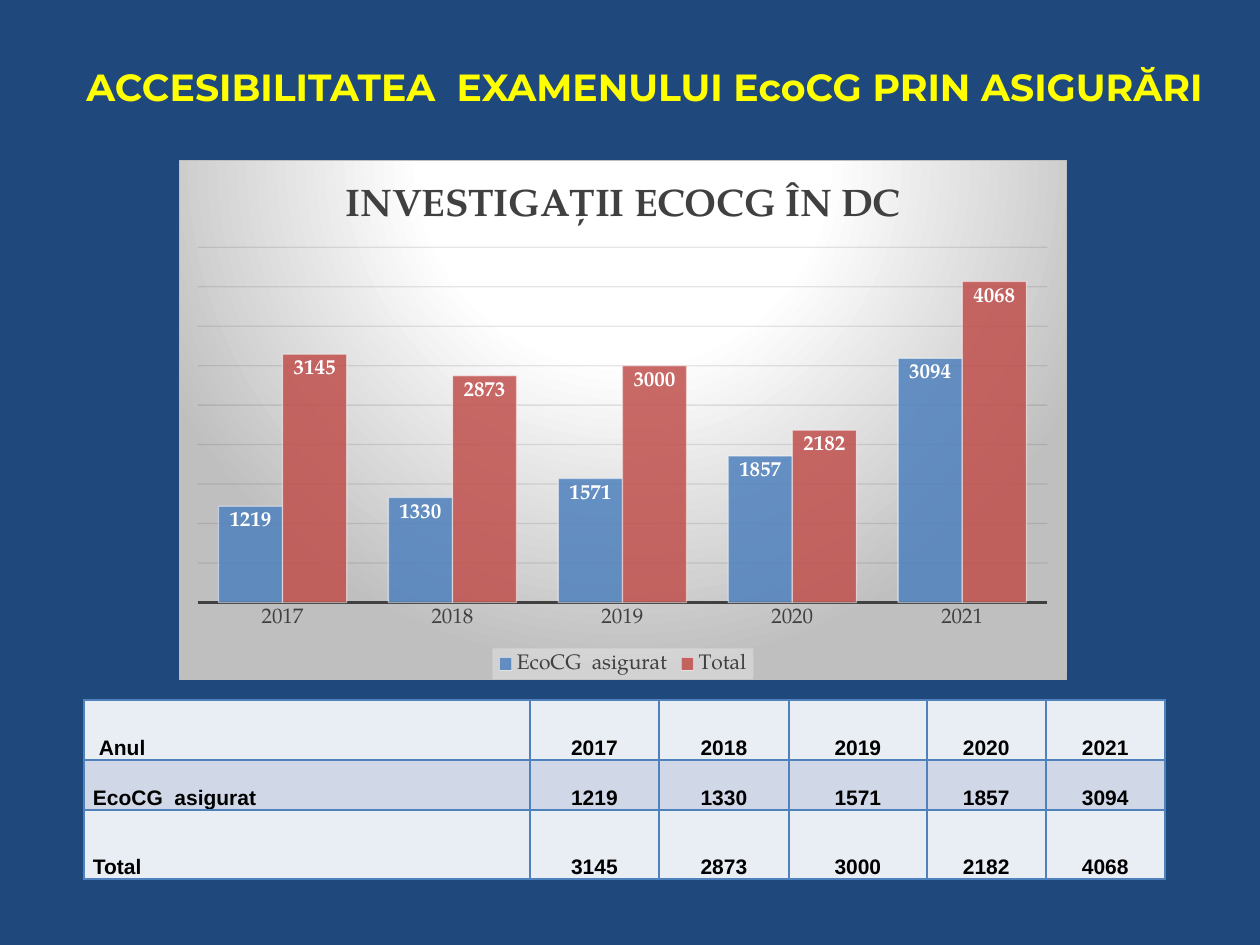
import pptx
import pptx.util
import pptx.chart.data
import pptx.dml.color
import pptx.enum.chart
import pptx.enum.text
import pptx.oxml
import pptx.oxml.ns

PX = 914400 / 126
HUES = {"back": "1F497D", "title": "FFFF00", "white": "FFFFFF", "grey": "BFBFBF",
        "dark": "404040", "grid": "0D0D0D", "blue": "4F81BD", "red": "C0504D",
        "black": "000000", "pale": "E9EDF4", "band": "D0D8E8", "key": "F2F2F2"}
SERIF = "TeX Gyre Pagella"
YEARS = ["2017", "2018", "2019", "2020", "2021"]
DATA = {"EcoCG  asigurat": [1219, 1330, 1571, 1857, 3094],
        "Total": [3145, 2873, 3000, 2182, 4068]}
NS = pptx.oxml.ns.nsdecls("a", "c")
qn = pptx.oxml.ns.qn
ANCHOR = pptx.enum.text.MSO_ANCHOR
ALIGN = pptx.enum.text.PP_ALIGN


def emu(px):
    return pptx.util.Emu(round(px * PX))


def rgb(name):
    return pptx.dml.color.RGBColor.from_string(HUES[name])


def put(item, vals):
    for key, val in vals.items():
        setattr(item, key, val)


def style(font, size, name, hue, bold=False):
    put(font, {"size": pptx.util.Pt(size), "name": name, "bold": bold})
    font.color.rgb = rgb(hue)


def stroke(line, hue, width=0.75):
    line.color.rgb = rgb(hue)
    line.width = pptx.util.Pt(width)


def fade(node, share):
    """Give each colour below the node an opacity in percent."""
    for tag in node.iter(qn("a:srgbClr")):
        tag.append(pptx.oxml.parse_xml(f'<a:alpha {NS} val="{share * 1000}"/>'))


def layout(x, y, w, h, inner=True):
    target = '<c:layoutTarget val="inner"/>' if inner else ""
    return pptx.oxml.parse_xml(
        f'<c:layout {NS}><c:manualLayout>{target}<c:xMode val="edge"/><c:yMode val="edge"/>'
        f'<c:x val="{x:.4f}"/><c:y val="{y:.4f}"/><c:w val="{w:.4f}"/><c:h val="{h:.4f}"/>'
        '</c:manualLayout></c:layout>')


def panel(chart):
    """Radial background and thin border of the chart."""
    stops = "".join(f'<a:gs pos="{pos}000"><a:srgbClr val="{HUES[hue]}"/></a:gs>'
                    for pos, hue in [(0, "white"), (39, "white"), (100, "grey")])
    props = pptx.oxml.parse_xml(
        f'<c:spPr {NS}><a:gradFill><a:gsLst>{stops}</a:gsLst><a:path path="circle">'
        '<a:fillToRect l="50000" t="-80000" r="50000" b="180000"/></a:path></a:gradFill>'
        f'<a:ln w="9525"><a:solidFill><a:srgbClr val="{HUES["grey"]}"/></a:solidFill></a:ln>'
        '</c:spPr>')
    chart._chartSpace.find(qn("c:chart")).addnext(props)


def add_title(slide, x, y, w, h):
    title = slide.shapes.title
    put(title, {"left": emu(x), "top": emu(y), "width": emu(w), "height": emu(h)})
    frame = title.text_frame
    put(frame, {"vertical_anchor": ANCHOR.MIDDLE, "word_wrap": True,
                "text": "ACCESIBILITATEA  EXAMENULUI EcoCG PRIN ASIGURĂRI"})
    para = frame.paragraphs[0]
    para.alignment = ALIGN.CENTER
    style(para.runs[0].font, 21.6, "Montserrat", "title", True)


def add_bars(slide, x, y, w, h):
    data = pptx.chart.data.CategoryChartData()
    data.categories = YEARS
    for name, vals in DATA.items():
        data.add_series(name, vals)
    kinds = pptx.enum.chart
    chart = slide.shapes.add_chart(kinds.XL_CHART_TYPE.COLUMN_CLUSTERED,
                                   emu(x), emu(y), emu(w), emu(h), data).chart
    style(chart.font, 10, SERIF, "white")
    panel(chart)

    # Heading
    chart.has_title = True
    head = chart.chart_title
    head.include_in_layout = False
    head.text_frame.text = "INVESTIGAȚII ECOCG ÎN DC"
    style(head.text_frame.paragraphs[0].runs[0].font, 22, SERIF, "dark", True)

    # Axes
    axis = chart.category_axis
    put(axis, {"major_tick_mark": kinds.XL_TICK_MARK.NONE,
               "minor_tick_mark": kinds.XL_TICK_MARK.NONE})
    style(axis.tick_labels.font, 12, SERIF, "dark")
    stroke(axis.format.line, "dark", 1.5)
    scale = chart.value_axis
    put(scale, {"visible": False, "minimum_scale": 0, "maximum_scale": 4500,
                "major_unit": 500, "has_major_gridlines": True})
    stroke(scale.major_gridlines.format.line, "grid")
    fade(scale._element.find(qn("c:majorGridlines")), 10)

    # Columns
    plot = chart.plots[0]
    put(plot, {"gap_width": 65, "overlap": 0, "vary_by_categories": False})
    for bar, hue in zip(plot.series, ("blue", "red")):
        bar.format.fill.solid()
        bar.format.fill.fore_color.rgb = rgb(hue)
        fade(bar._element.spPr, 85)
        stroke(bar.format.line, "white")
        fade(bar._element.spPr.find(qn("a:ln")), 50)
        tags = bar.data_labels
        put(tags, {"show_value": True, "position": kinds.XL_LABEL_POSITION.INSIDE_END})
        style(tags.font, 12, SERIF, "white", True)
    area = chart._chartSpace.find(".//" + qn("c:plotArea"))
    for old in area.findall(qn("c:layout")):
        area.remove(old)
    area.insert(0, layout(18 / w, 87 / h, 851 / w, 356 / h))

    # Legend
    chart.has_legend = True
    key = chart.legend
    put(key, {"position": kinds.XL_LEGEND_POSITION.BOTTOM, "include_in_layout": False})
    style(key.font, 12, SERIF, "dark")
    back = pptx.oxml.parse_xml(f'<c:spPr {NS}><a:solidFill><a:srgbClr val="{HUES["key"]}"/>'
                               '</a:solidFill></c:spPr>')
    fade(back, 39)
    key._element.find(qn("c:txPr")).addprevious(back)


def edge(cell):
    props = cell._tc.get_or_add_tcPr()
    for spot, side in enumerate("LRTB"):
        props.insert(spot, pptx.oxml.parse_xml(
            f'<a:ln{side} {NS} w="12700"><a:solidFill><a:srgbClr val="{HUES["blue"]}"/>'
            f'</a:solidFill></a:ln{side}>'))


def add_grid(slide, x, y, cols, rows):
    table = slide.shapes.add_table(len(rows), len(cols), emu(x), emu(y),
                                   emu(sum(cols)), emu(sum(rows))).table
    for col, width in zip(table.columns, cols):
        col.width = emu(width)
    for row, height in zip(table.rows, rows):
        row.height = emu(height)
    lines = [["\N{NO-BREAK SPACE}Anul", *YEARS]] + [[name, *vals] for name, vals in DATA.items()]
    for r, line in enumerate(lines):
        for c, text in enumerate(line):
            cell = table.cell(r, c)
            put(cell, {"text": str(text), "vertical_anchor": ANCHOR.BOTTOM,
                       "margin_left": emu(9), "margin_right": emu(9),
                       "margin_top": 0, "margin_bottom": 0})
            cell.fill.solid()
            cell.fill.fore_color.rgb = rgb("band" if r % 2 else "pale")
            edge(cell)
            para = cell.text_frame.paragraphs[0]
            put(para, {"line_spacing": 1.07, "alignment": ALIGN.CENTER if c else ALIGN.LEFT})
            style(para.runs[0].font, 12, "Arial", "black", True)


def main():
    deck = pptx.Presentation()
    put(deck, {"slide_width": emu(1260), "slide_height": emu(945)})
    slide = deck.slides.add_slide(deck.slide_layouts[5])
    slide.background.fill.solid()
    slide.background.fill.fore_color.rgb = rgb("back")
    add_title(slide, 63, 38, 1163, 97)
    add_bars(slide, 179, 160, 888, 520)
    add_grid(slide, 84, 700, [446, 129, 130, 138, 119, 119], [60, 50, 69])
    deck.save("out.pptx")


if __name__ == "__main__":
    main()
